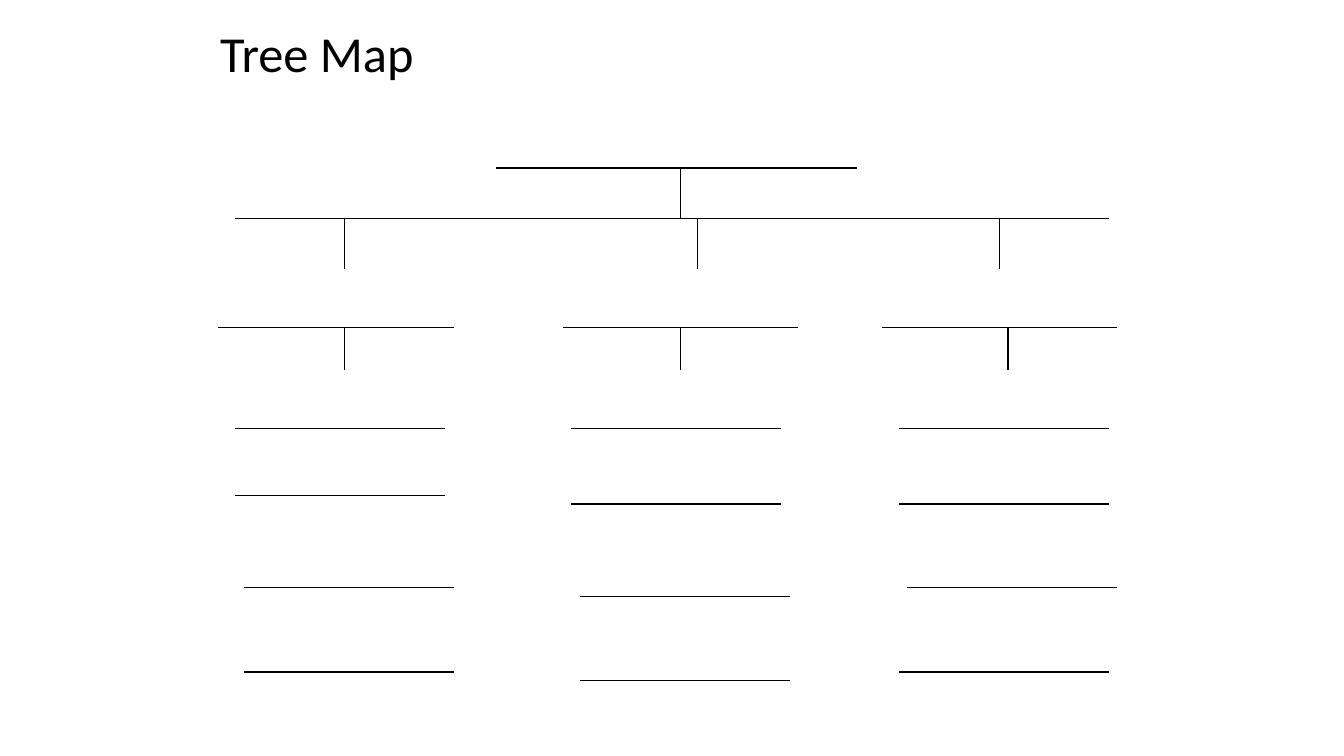
"""Build a blank tree map slide with three branches of four entry lines."""
from lxml.etree import SubElement
from pptx import Presentation
from pptx.dml.color import RGBColor
from pptx.enum.shapes import MSO_CONNECTOR
from pptx.enum.text import MSO_ANCHOR, MSO_AUTO_SIZE, PP_ALIGN
from pptx.oxml.ns import qn
from pptx.util import Emu, Pt

BLACK = RGBColor(0, 0, 0)
WHITE = RGBColor(255, 255, 255)
EMU_PER_PX = 9525
ENTRY_WIDTH = 200
BRANCH_WIDTH = 224
BRANCHES = [
    {"drop": 328, "left": 208, "stem": 328,
     "entries": [(224, 408), (224, 472), (232, 560), (232, 640)]},
    {"drop": 664, "left": 536, "stem": 648,
     "entries": [(544, 408), (544, 480), (552, 568), (552, 648)]},
    {"drop": 952, "left": 840, "stem": 960,
     "entries": [(856, 408), (856, 480), (864, 560), (856, 640)]},
]


def px(length):
    return Emu(length * EMU_PER_PX)


class TreePage:
    def __init__(self, deck):
        self.font = "Calibri"
        self.color = BLACK
        self.line_width = Pt(0.75)
        self.page = deck.slides.add_slide(deck.slide_layouts[5])
        self.page.background.fill.solid()
        self.page.background.fill.fore_color.rgb = WHITE

    def title(self, text, left, top, width, height, size):
        box = self.page.shapes.title
        box.left, box.top, box.width, box.height = map(px, (left, top, width, height))
        frame = box.text_frame
        frame.text = text
        frame.word_wrap = True
        frame.auto_size = MSO_AUTO_SIZE.SHAPE_TO_FIT_TEXT
        frame.vertical_anchor = MSO_ANCHOR.TOP
        para = frame.paragraphs[0]
        para.alignment = PP_ALIGN.LEFT
        font = para.runs[0].font
        font.name, font.size = self.font, Pt(size)
        font.color.rgb = self.color

    def line(self, left, top, right, bottom):
        connector = self.page.shapes.add_connector(
            MSO_CONNECTOR.STRAIGHT, px(left), px(top), px(right), px(bottom))
        connector.line.color.rgb = self.color
        connector.line.width = self.line_width
        SubElement(connector._element.spPr, qn("a:effectLst"))

    def across(self, left, top, width):
        self.line(left, top, left + width, top)

    def down(self, left, top, height):
        self.line(left, top, left, top + height)


def main():
    deck = Presentation()
    deck.slide_width, deck.slide_height = px(1280), px(720)
    tree = TreePage(deck)
    tree.title("Tree Map", 200, 16, 240, 68, 36)
    tree.across(472, 160, 344)
    tree.down(648, 160, 48)
    tree.across(224, 208, 832)
    for branch in BRANCHES:
        tree.down(branch["drop"], 208, 48)
        tree.across(branch["left"], 312, BRANCH_WIDTH)
        tree.down(branch["stem"], 312, 40)
        for left, top in branch["entries"]:
            tree.across(left, top, ENTRY_WIDTH)
    deck.save("out.pptx")


if __name__ == "__main__":
    main()
